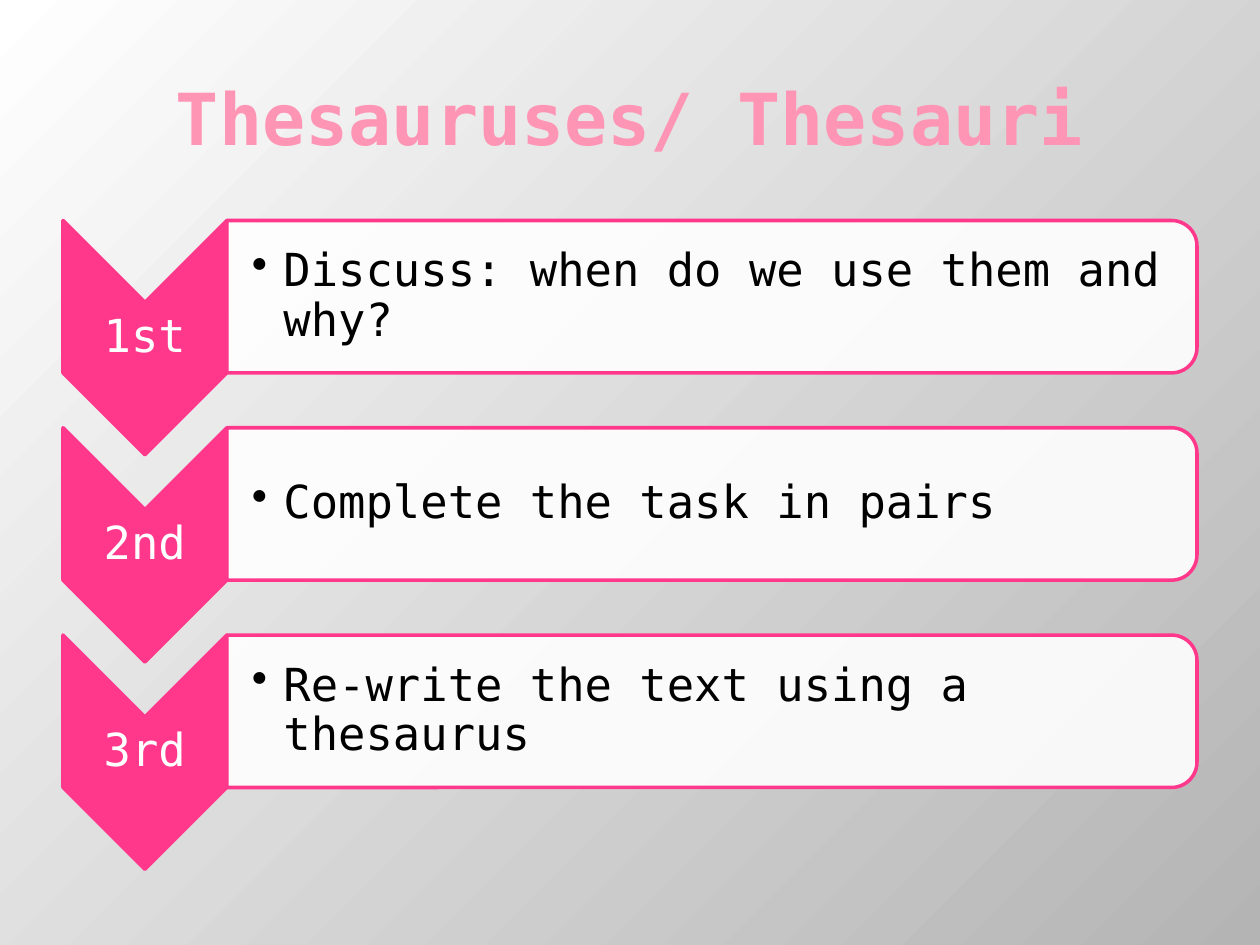
import dataclasses

import lxml.etree
import pptx
import pptx.dml.color
import pptx.enum.shapes
import pptx.enum.text
import pptx.oxml.ns
import pptx.util

SHAPES = pptx.enum.shapes.MSO_SHAPE
ALIGN = pptx.enum.text.PP_ALIGN


@dataclasses.dataclass(frozen=True)
class Theme:
    font: str = "DejaVu Sans Mono"
    title_size: int = 41
    body_size: int = 26
    line_width: int = 2
    accent: str = "FF388C"
    title: str = "FF95B5"
    body: str = "000000"
    light: str = "FFFFFF"
    shade: str = "B4B4B4"


def rgb(value):
    return pptx.dml.color.RGBColor.from_string(value)


def apply(target, formats):
    for name, value in formats.items():
        setattr(target, name, value)


def add_xml(parent, tag, **attributes):
    return lxml.etree.SubElement(parent, pptx.oxml.ns.qn(tag), attributes)


class StepSlide:
    columns, rows = 100, 75

    def __init__(self, presentation, theme):
        self.theme = theme
        self.column = presentation.slide_width / self.columns
        self.row = presentation.slide_height / self.rows
        self.slide = presentation.slides.add_slide(presentation.slide_layouts[6])

    def place(self, left, top, width, height):
        return [round(left * self.column), round(top * self.row),
                round(width * self.column), round(height * self.row)]

    def background(self):
        fill = self.slide.background.fill
        fill.gradient()
        fill.gradient_angle = 315
        colors = (self.theme.light, self.theme.shade)
        for stop, color, position in zip(fill.gradient_stops, colors, (0, 1)):
            stop.color.rgb = rgb(color)
            stop.position = position

    def turned_shape(self, kind, area, color, opacity=100):
        left, top, width, height = self.place(*area)
        shift = (width - height) // 2
        shape = self.slide.shapes.add_shape(kind, left + shift, top - shift, height, width)
        shape.rotation = 90
        shape.shadow.inherit = False
        shape.fill.solid()
        shape.fill.fore_color.rgb = rgb(color)
        if opacity < 100:
            fill_color = shape.fill._xPr.find(".//" + pptx.oxml.ns.qn("a:srgbClr"))
            add_xml(fill_color, "a:alpha", val=str(opacity * 1000))
        shape.line.color.rgb = rgb(self.theme.accent)
        shape.line.width = pptx.util.Pt(self.theme.line_width)

    def text(self, words, area, color, size, paragraph_format, frame_format=None, bold=False):
        frame = self.slide.shapes.add_textbox(*self.place(*area)).text_frame
        apply(frame, {"word_wrap": True,
                      "vertical_anchor": pptx.enum.text.MSO_ANCHOR.MIDDLE,
                      **(frame_format or {})})
        paragraph = frame.paragraphs[0]
        apply(paragraph, paragraph_format)
        run = paragraph.add_run()
        run.text = words
        apply(run.font, {"name": self.theme.font, "size": pptx.util.Pt(size), "bold": bold})
        run.font.color.rgb = rgb(color)
        return paragraph

    def title(self, words):
        self.text(words, (5, 3, 90, 12.5), self.theme.title, self.theme.title_size,
                  {"alignment": ALIGN.CENTER}, bold=True)

    def step(self, label, task, top):
        theme = self.theme
        inset = pptx.util.Inches(0.02)
        margins = {"margin_" + side: inset for side in ("left", "top", "right", "bottom")}
        self.turned_shape(SHAPES.CHEVRON, (5, top, 13, 18.6), theme.accent)
        self.text(label, (5, top + 6.5, 13, 5.6), theme.light, theme.body_size,
                  {"alignment": ALIGN.CENTER, "line_spacing": 0.9,
                   "space_after": pptx.util.Pt(9)}, margins)
        self.turned_shape(SHAPES.ROUND_2_SAME_RECTANGLE, (18, top, 77, 12.1), theme.light, 90)
        paragraph = self.text(task, (18, top + 0.6, 76.4, 10.9), theme.body, theme.body_size,
                              {"line_spacing": 0.9, "space_after": pptx.util.Pt(4)},
                              {**margins, "margin_left": pptx.util.Inches(0.2)})
        properties = paragraph._p.get_or_add_pPr()
        indent = pptx.util.Inches(0.25)
        properties.set("marL", str(indent))
        properties.set("indent", str(-indent))
        add_xml(properties, "a:buChar", char="•")


def main():
    presentation = pptx.Presentation()
    apply(presentation, {"slide_width": pptx.util.Inches(10),
                         "slide_height": pptx.util.Inches(7.5)})
    slide = StepSlide(presentation, Theme())
    slide.background()
    slide.title("Thesauruses/ Thesauri")
    steps = {
        "1st": "Discuss: when do we use them and why?",
        "2nd": "Complete the task in pairs",
        "3rd": "Re-write the text using a thesaurus",
    }
    first_top, pitch = 17.5, 16.45
    for index, (label, task) in enumerate(steps.items()):
        slide.step(label, task, first_top + index * pitch)
    presentation.save("out.pptx")


if __name__ == "__main__":
    main()
